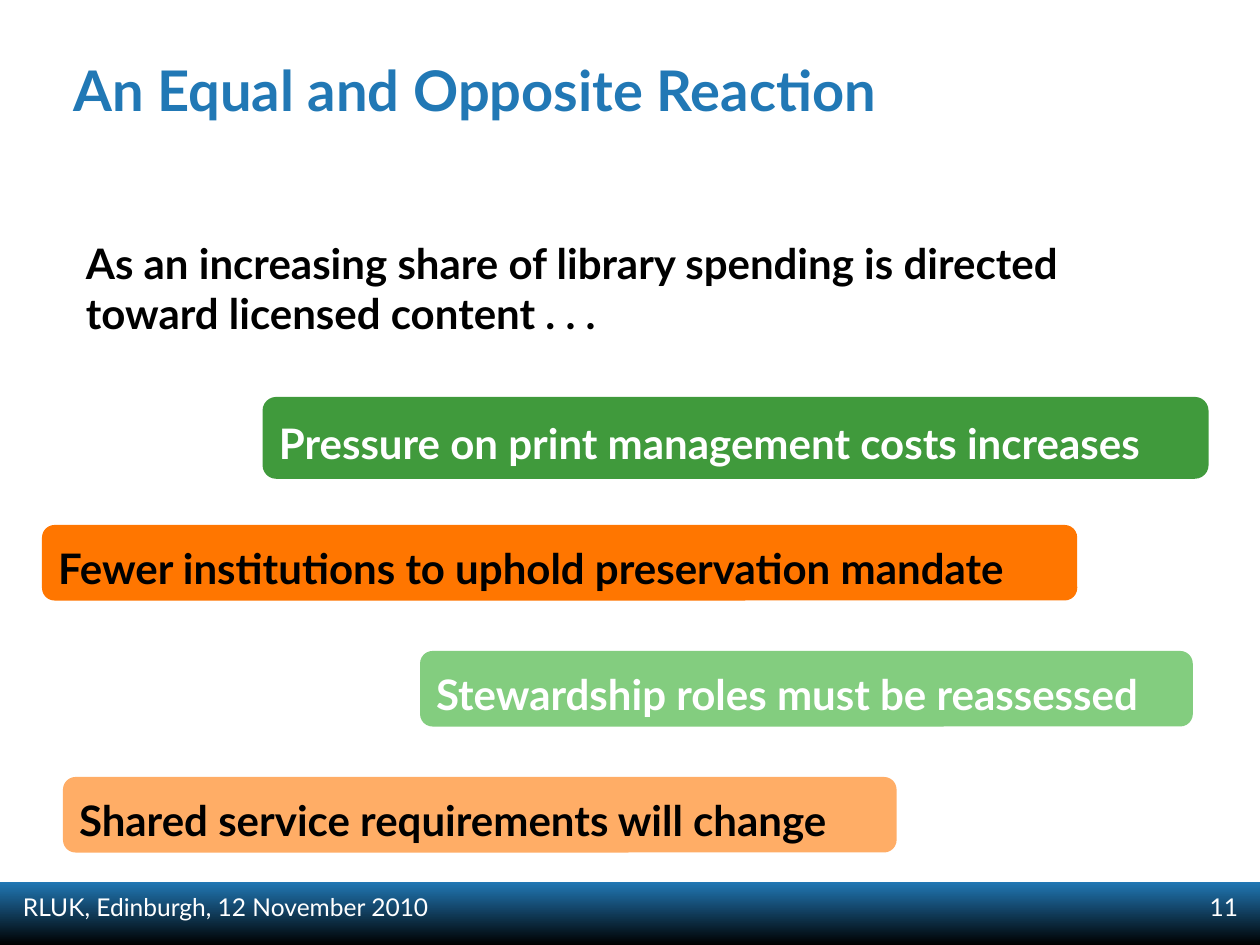
from dataclasses import dataclass

from pptx import Presentation
from pptx import util as u
from pptx.dml.color import RGBColor
from pptx.enum import shapes, text


@dataclass(frozen=True)
class Theme:
    font: str = "Lato"
    blue: str = "2178B5"
    black: str = "000000"
    white: str = "FFFFFF"
    green: str = "409A3C"
    orange: str = "FF7600"
    light_green: str = "83CD7F"
    light_orange: str = "FFAD66"
    title_size: int = 32
    body_size: int = 24
    footer_size: int = 14


class SlideBuilder:
    """Places elements on a grid of 120 columns by 90 rows."""

    COLUMNS, ROWS = 120, 90

    def __init__(self, presentation, theme):
        self.theme = theme
        self.slide = presentation.slides.add_slide(presentation.slide_layouts[6])
        self.column = presentation.slide_width / self.COLUMNS
        self.row = presentation.slide_height / self.ROWS

    def box(self, left, top, width, height):
        return (u.Emu(round(left * self.column)), u.Emu(round(top * self.row)),
                u.Emu(round(width * self.column)), u.Emu(round(height * self.row)))

    def set_text(self, shape, words, size, color, bold, align=text.PP_ALIGN.LEFT):
        shape.text_frame.word_wrap = True
        paragraph = shape.text_frame.paragraphs[0]
        paragraph.text = words
        paragraph.alignment = align
        font = paragraph.font
        font.name, font.size, font.bold = self.theme.font, u.Pt(size), bold
        font.color.rgb = RGBColor.from_string(color)
        return paragraph

    def label(self, words, grid, size, color, bold=True,
              align=text.PP_ALIGN.LEFT, anchor=text.MSO_ANCHOR.TOP):
        shape = self.slide.shapes.add_textbox(*self.box(*grid))
        shape.text_frame.vertical_anchor = anchor
        self.set_text(shape, words, size, color, bold, align)

    def shape(self, kind, grid):
        shape = self.slide.shapes.add_shape(kind, *self.box(*grid))
        shape.shadow.inherit = False
        shape.line.fill.background()
        return shape

    def gradient_band(self, grid, top_color, bottom_color):
        fill = self.shape(shapes.MSO_SHAPE.RECTANGLE, grid).fill
        fill.gradient()
        fill.gradient_angle = 270
        for stop, color in zip(fill.gradient_stops, (top_color, bottom_color)):
            stop.color.rgb = RGBColor.from_string(color)

    def banner(self, words, grid, fill_color, text_color):
        shape = self.shape(shapes.MSO_SHAPE.ROUNDED_RECTANGLE, grid)
        shape.fill.solid()
        shape.fill.fore_color.rgb = RGBColor.from_string(fill_color)
        shape.text_frame.vertical_anchor = text.MSO_ANCHOR.MIDDLE
        paragraph = self.set_text(shape, words, self.theme.body_size, text_color, True)
        paragraph.line_spacing = 1.2


def main():
    presentation = Presentation()
    presentation.slide_width, presentation.slide_height = u.Inches(10), u.Inches(7.5)
    theme = Theme()
    builder = SlideBuilder(presentation, theme)

    builder.gradient_band((0, 84, 120, 6), theme.blue, theme.black)
    builder.label("RLUK, Edinburgh, 12 November 2010", (1, 84.4, 68, 4),
                  theme.footer_size, theme.white, bold=False)
    builder.label("11", (111.1, 84.4, 8, 4), theme.footer_size, theme.white,
                  bold=False, align=text.PP_ALIGN.RIGHT)
    builder.label("An Equal and Opposite Reaction", (5.8, 1.9, 105.2, 13.1),
                  theme.title_size, theme.blue, anchor=text.MSO_ANCHOR.MIDDLE)
    builder.label("As an increasing share of library spending is directed "
                  "toward licensed content . . .", (7, 22, 104, 10.9),
                  theme.body_size, theme.black)

    banners = [
        ("Pressure on print management costs increases",
         (25, 37.8, 90.1, 7.8), theme.green, theme.white),
        ("Fewer institutions to uphold preservation mandate",
         (4, 50, 98.6, 7.2), theme.orange, theme.black),
        ("Stewardship roles must be reassessed",
         (40, 62, 73.6, 7.2), theme.light_green, theme.white),
        ("Shared service requirements will change",
         (6, 74, 79.4, 7.2), theme.light_orange, theme.black),
    ]
    for banner in banners:
        builder.banner(*banner)

    presentation.save("out.pptx")


if __name__ == "__main__":
    main()
